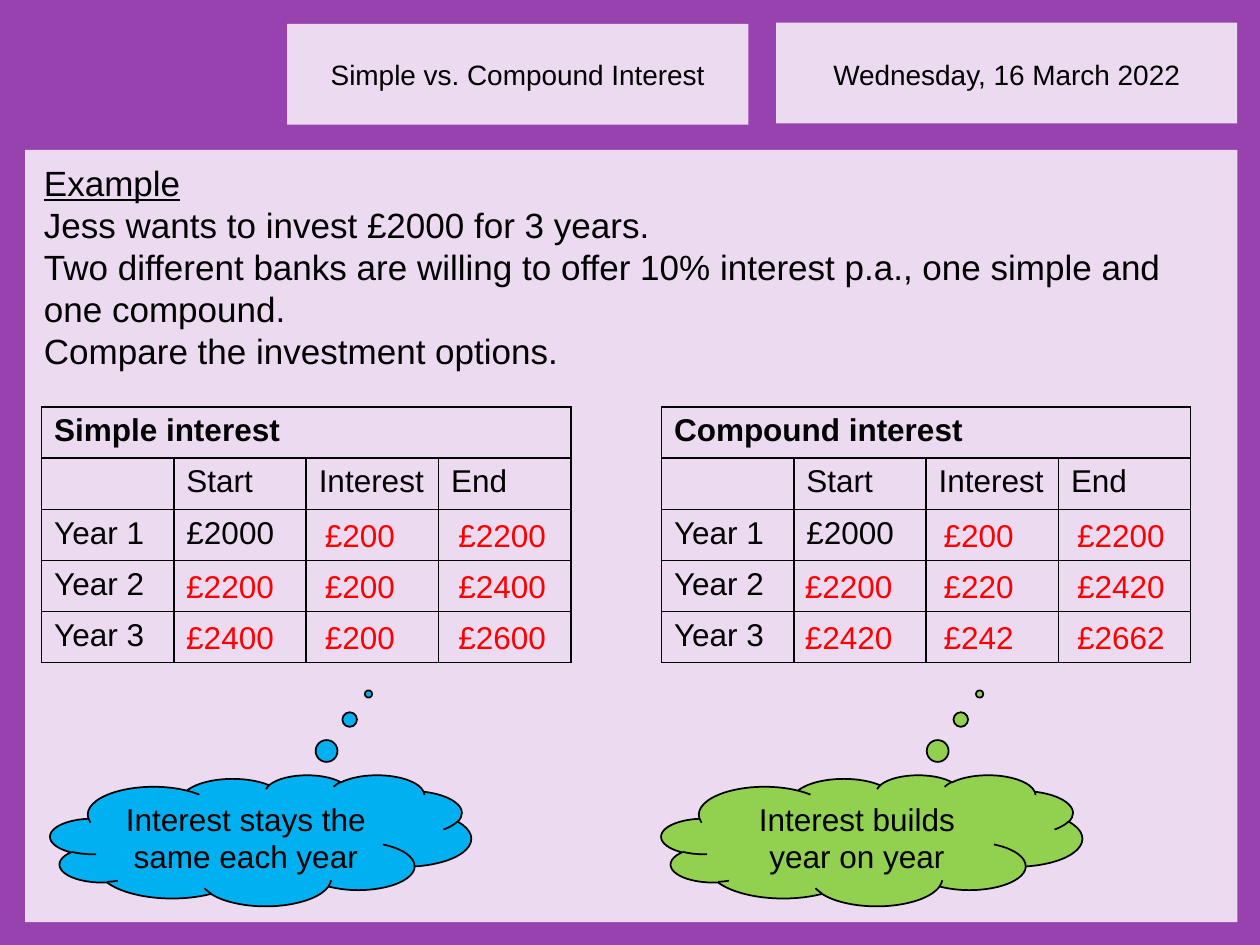
"""Build a slide comparing simple and compound interest on an investment."""
from lxml.etree import SubElement
from pptx import Presentation
from pptx.dml.color import RGBColor
from pptx.enum.shapes import MSO_SHAPE
from pptx.enum.text import MSO_ANCHOR, MSO_AUTO_SIZE, PP_ALIGN
from pptx.oxml.ns import qn
from pptx.util import Inches, Pt

PURPLE = RGBColor(0x98, 0x42, 0xB0)
LILAC = RGBColor(0xEC, 0xDA, 0xF1)
BLACK = RGBColor(0, 0, 0)
RED = RGBColor(0xFF, 0, 0)
BLUE = RGBColor(0x00, 0xB0, 0xF0)
GREEN = RGBColor(0x92, 0xD0, 0x50)


def add_run(p, text, size, color=BLACK):
    r = p.add_run()
    r.text = text
    r.font.name = "Arial"
    r.font.size = Pt(size)
    r.font.color.rgb = color
    return r


def add_box(s, x, y, w, h):
    tf = s.shapes.add_textbox(Inches(x), Inches(y), Inches(w), Inches(h)).text_frame
    tf.word_wrap = True
    tf.auto_size = MSO_AUTO_SIZE.SHAPE_TO_FIT_TEXT
    return tf


prs = Presentation()
prs.slide_width, prs.slide_height = Inches(10), Inches(7.5)
s = prs.slides.add_slide(prs.slide_layouts[6])

panels = [
    (0, 0, 10, 7.5, PURPLE),
    (6.16, 0.18, 3.66, 0.8, LILAC),
    (2.28, 0.19, 3.66, 0.8, LILAC),
    (0.2, 1.19, 9.62, 6.13, LILAC),
]
for x, y, w, h, color in panels:
    sp = s.shapes.add_shape(MSO_SHAPE.RECTANGLE, Inches(x), Inches(y), Inches(w), Inches(h))
    sp.shadow.inherit = False
    sp.fill.solid()
    sp.fill.fore_color.rgb = color
    sp.line.fill.background()

for x, text in [(6.16, "Wednesday, 16 March 2022"), (2.28, "Simple vs. Compound Interest")]:
    p = add_box(s, x, 0.41, 3.66, 0.37).paragraphs[0]
    p.alignment = PP_ALIGN.CENTER
    add_run(p, text, 16)

tf = add_box(s, 0.25, 1.23, 9.52, 1.78)
add_run(tf.paragraphs[0], "Example", 20).font.underline = True
for text in [
    "Jess wants to invest £2000 for 3 years.",
    "Two different banks are willing to offer 10% interest p.a., one simple and one compound.",
    "Compare the investment options.",
]:
    add_run(tf.add_paragraph(), text, 20)

options = [
    ("Simple interest", 0.33, 1.38, 0.4, BLUE, "Interest stays the same each year",
     [["", "£200", "£2200"], ["£2200", "£200", "£2400"], ["£2400", "£200", "£2600"]]),
    ("Compound interest", 5.25, 6.29, 5.25, GREEN, "Interest builds year on year",
     [["", "£200", "£2200"], ["£2200", "£220", "£2420"], ["£2420", "£242", "£2662"]]),
]
for title, table_x, answer_x, cloud_x, color, note, answers in options:
    rows = [
        [title, "", "", ""],
        ["", "Start", "Interest", "End"],
        ["Year 1", "£2000", "", ""],
        ["Year 2", "", "", ""],
        ["Year 3", "", "", ""],
    ]
    table = s.shapes.add_table(
        5, 4, Inches(table_x), Inches(3.23), Inches(4.2), Inches(2.03)).table
    table.first_row = False
    table.horz_banding = False
    table.cell(0, 0).merge(table.cell(0, 3))
    for i, row in enumerate(rows):
        for j, text in enumerate(row):
            cell = table.cell(i, j)
            tcPr = cell._tc.get_or_add_tcPr()
            for side in ("a:lnL", "a:lnR", "a:lnT", "a:lnB"):
                ln = SubElement(tcPr, qn(side), w=str(Pt(1)))
                fill = SubElement(ln, qn("a:solidFill"))
                SubElement(fill, qn("a:srgbClr"), val=str(BLACK))
            cell.fill.background()
            if text:
                r = add_run(cell.text_frame.paragraphs[0], text, 18)
                r.font.bold = i == 0

    sp = s.shapes.add_shape(
        MSO_SHAPE.CLOUD_CALLOUT, Inches(cloud_x), Inches(6.15), Inches(3.34), Inches(1.04))
    sp.adjustments[0], sp.adjustments[1] = 0.256, -1.117
    sp.shadow.inherit = False
    sp.fill.solid()
    sp.fill.fore_color.rgb = color
    sp.line.color.rgb = BLACK
    sp.line.width = Pt(1)
    tf = sp.text_frame
    tf.word_wrap = True
    tf.vertical_anchor = MSO_ANCHOR.MIDDLE
    p = tf.paragraphs[0]
    p.alignment = PP_ALIGN.CENTER
    add_run(p, note, 18)

    for i, row in enumerate(answers):
        for dx, text in zip((0, 1.1, 2.16), row):
            if text:
                tf = add_box(s, answer_x + dx, 4.05 + 0.405 * i, 0.96, 0.4)
                add_run(tf.paragraphs[0], text, 18, RED)

prs.save("out.pptx")
